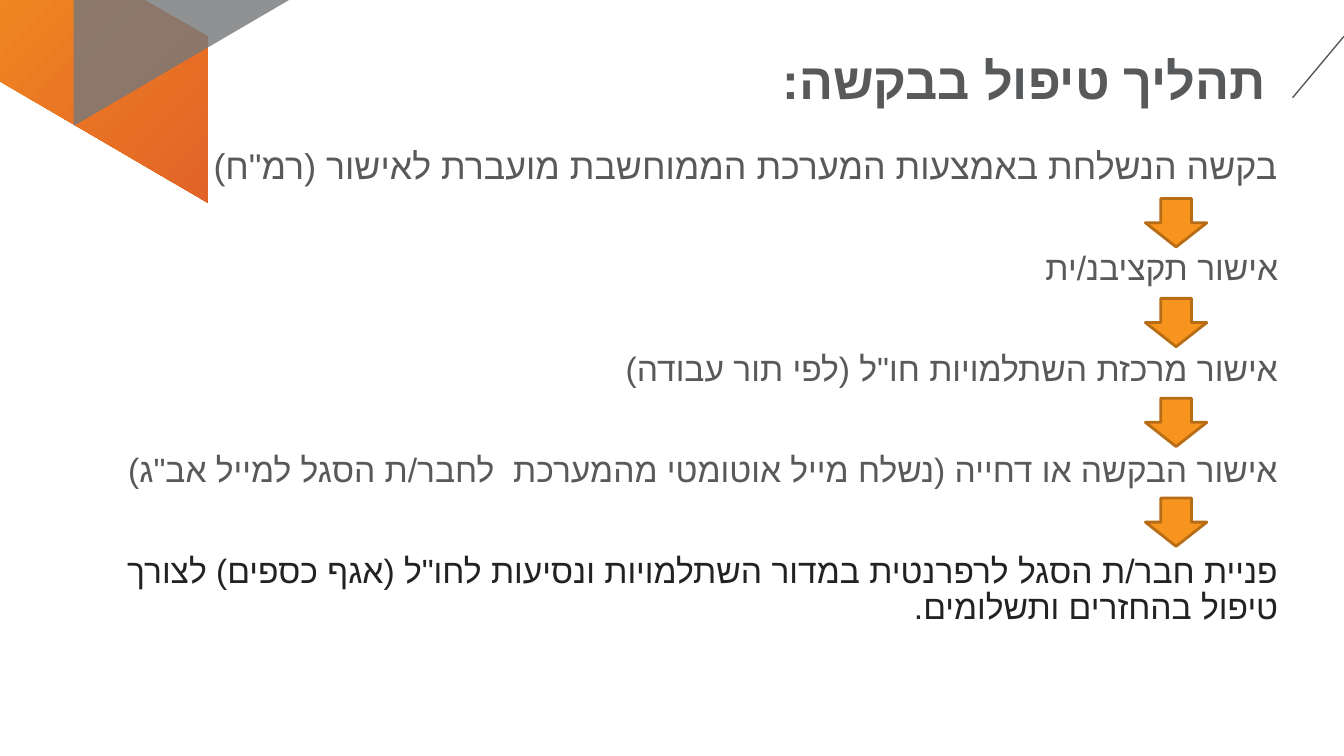
from lxml import etree
from pptx import Presentation
from pptx.dml.color import RGBColor
from pptx.enum.shapes import MSO_CONNECTOR, MSO_SHAPE
from pptx.enum.text import MSO_ANCHOR, MSO_AUTO_SIZE, PP_ALIGN
from pptx.oxml.ns import qn
from pptx.util import Inches, Pt

COLORS = {
    "text": "58595B",
    "dark": "222222",
    "orange": "F7941E",
    "red": "E16327",
    "gray": "77787B",
    "arrow_line": "B76D16",
}
FONT = "Arial"
TITLE = "תהליך טיפול בבקשה:"
# The first step is sized to end clear of the corner art.
STEPS = [
    ('בקשה הנשלחת באמצעות המערכת הממוחשבת מועברת לאישור (רמ"ח)', 25.5, "text"),
    ("אישור תקציבנ/ית", 24, "text"),
    ('אישור מרכזת השתלמויות חו"ל (לפי תור עבודה)', 24, "text"),
    ('אישור הבקשה או דחייה (נשלח מייל אוטומטי מהמערכת  לחבר/ת הסגל למייל אב"ג)', 24, "text"),
    ('פניית חבר/ת הסגל לרפרנטית במדור השתלמויות ונסיעות לחו"ל (אגף כספים) '
     "לצורך טיפול בהחזרים ותשלומים.", 24, "dark"),
]
LINE_HEIGHT = 26
STEP_GAP = 46


def rgb(name):
    return RGBColor.from_string(COLORS[name])


def write_text(paragraph, text, size, color="text", bold=False, line_spacing=None, before=0):
    """Fill a right-to-left paragraph and set its format."""
    run = paragraph.add_run()
    run.text = text
    run.font.size = Pt(size)
    run.font.bold = bold
    run.font.name = FONT
    run.font.color.rgb = rgb(color)
    properties = run.font._element
    properties.set("lang", "he-IL")
    etree.SubElement(properties, qn("a:cs")).set("typeface", FONT)
    paragraph.alignment = PP_ALIGN.RIGHT
    paragraph.line_spacing = line_spacing
    paragraph.space_before = Pt(before)
    paragraph._p.get_or_add_pPr().set("rtl", "1")


def prepare_frame(frame, anchor):
    frame.word_wrap = True
    frame.auto_size = MSO_AUTO_SIZE.NONE
    frame.vertical_anchor = anchor
    frame.margin_left = frame.margin_right = Inches(0.05)
    frame.margin_top = frame.margin_bottom = Inches(0.05)


def add_band(slide, left, top, width, height, corners):
    """Draw a slanted band; corners are fractions of its box."""
    points = [(Inches(left + x * width), Inches(top + y * height)) for x, y in corners]
    builder = slide.shapes.build_freeform(*points[0], scale=1.0)
    builder.add_line_segments(points[1:], close=True)
    band = builder.convert_to_shape()
    band.shadow.inherit = False
    band.line.fill.background()
    return band


def add_corner_art(slide, left, top):
    orange = add_band(slide, left, top, 2.66, 3.17, [(0, 0), (0, 0.51), (1, 1), (1, 0.48)])
    orange.fill.gradient()
    orange.fill.gradient_angle = 315
    for stop, color in zip(orange.fill.gradient_stops, ("orange", "red")):
        stop.color.rgb = rgb(color)

    gray = add_band(slide, left + 1.33, top - 0.18, 2.17, 2.59,
                    [(1, 0), (1, 0.51), (0, 1), (0, 0.48)])
    gray.fill.solid()
    gray.fill.fore_color.rgb = rgb("gray")
    color_element = gray._element.spPr.find(qn("a:solidFill"))[0]
    etree.SubElement(color_element, qn("a:alpha")).set("val", "81000")


def add_title(slide, left, top, width, height):
    title = slide.shapes.title
    title.left, title.top = Inches(left), Inches(top)
    title.width, title.height = Inches(width), Inches(height)
    prepare_frame(title.text_frame, MSO_ANCHOR.MIDDLE)
    write_text(title.text_frame.paragraphs[0], TITLE, 36, bold=True, line_spacing=0.9)

    right = left + width
    accent = slide.shapes.add_connector(
        MSO_CONNECTOR.STRAIGHT, Inches(right + 0.72), Inches(top - 0.04),
        Inches(right + 0.21), Inches(top + 0.57))
    accent.line.color.rgb = rgb("text")
    accent.line.width = Pt(1)
    etree.SubElement(accent._element.spPr, qn("a:effectLst"))


def add_process(slide, left, top, width, height):
    """Write the steps and put a down arrow between each two."""
    box = slide.shapes.add_textbox(Inches(left), Inches(top), Inches(width), Inches(height))
    frame = box.text_frame
    prepare_frame(frame, MSO_ANCHOR.TOP)
    for index, (text, size, color) in enumerate(STEPS):
        paragraph = frame.add_paragraph() if index else frame.paragraphs[0]
        write_text(paragraph, text, size, color, line_spacing=Pt(LINE_HEIGHT),
                   before=STEP_GAP if index else 0)

    for index in range(len(STEPS) - 1):
        arrow = slide.shapes.add_shape(
            MSO_SHAPE.DOWN_ARROW, Inches(left + width - 1.37),
            Inches(top + 0.53 + 0.99 * index), Inches(0.61), Inches(0.48))
        arrow.shadow.inherit = False
        arrow.fill.solid()
        arrow.fill.fore_color.rgb = rgb("orange")
        arrow.line.color.rgb = rgb("arrow_line")
        arrow.line.width = Pt(2)


def main():
    presentation = Presentation()
    presentation.slide_width = Inches(13.33)
    presentation.slide_height = Inches(7.5)
    slide = presentation.slides.add_slide(presentation.slide_layouts[5])
    add_corner_art(slide, -0.6, -1.16)
    add_title(slide, 0.88, 0.4, 11.73, 0.85)
    add_process(slide, 0.87, 1.44, 11.86, 5.35)
    presentation.save("out.pptx")


if __name__ == "__main__":
    main()
